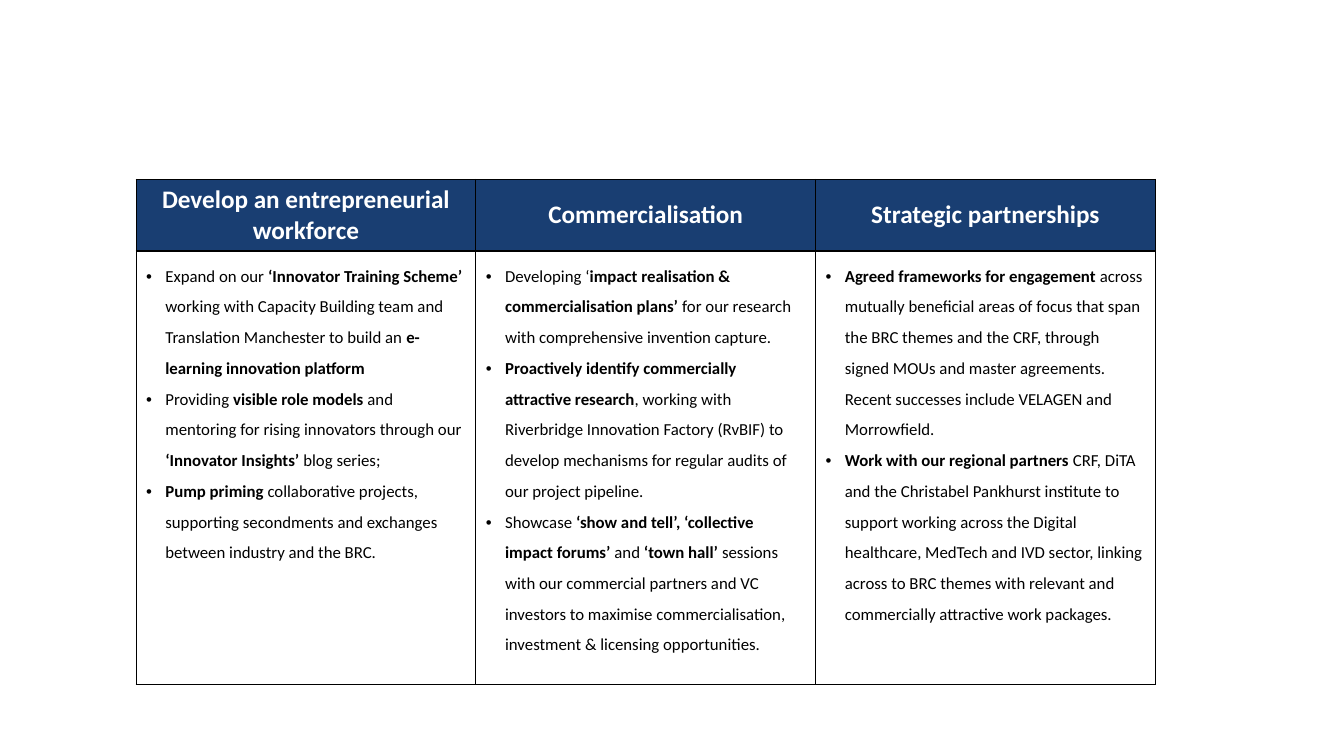
from typing import NamedTuple

from lxml import etree
from pptx import Presentation
from pptx.dml.color import RGBColor
from pptx.enum.text import MSO_ANCHOR, PP_ALIGN
from pptx.oxml.ns import qn
from pptx.util import Inches, Pt

CENTER = PP_ALIGN.CENTER
MIDDLE, TOP = MSO_ANCHOR.MIDDLE, MSO_ANCHOR.TOP

NAVY = RGBColor(0x19, 0x3E, 0x72)
WHITE = RGBColor(0xFF, 0xFF, 0xFF)
BLACK = RGBColor(0x00, 0x00, 0x00)
FONT = "Calibri"

# Grid, in inches
SLIDE_W, SLIDE_H = 13.33, 7.5
GRID_LEFT, GRID_TOP = 1.35, 1.78
COLUMN_W = 3.37
HEADER_H, BODY_H = 0.7, 4.3
BULLET_INDENT = 0.19


class Span(NamedTuple):
    text: str
    bold: bool = False


class Pillar(NamedTuple):
    heading: str
    bullets: list[list[Span]]


PILLARS = [
    Pillar("Develop an entrepreneurial workforce", [
        [Span("Expand on our "),
         Span("‘Innovator Training Scheme’ ", True),
         Span("working with Capacity Building team and Translation Manchester to build an "),
         Span("e-learning innovation platform", True)],
        [Span("Providing "),
         Span("visible role models ", True),
         Span("and mentoring for rising innovators through our "),
         Span("‘Innovator Insights’ ", True),
         Span("blog series;")],
        [Span("Pump priming ", True),
         Span("collaborative projects, supporting secondments and exchanges "
              "between industry and the BRC.")],
    ]),
    Pillar("Commercialisation", [
        [Span("Developing ‘"),
         Span("impact realisation & commercialisation plans’ ", True),
         Span("for our research with comprehensive invention capture.")],
        [Span("Proactively identify commercially attractive research", True),
         Span(", working with Riverbridge Innovation Factory (RvBIF) to develop "
              "mechanisms for regular audits of our project pipeline.")],
        [Span("Showcase "),
         Span("‘show and tell’, ‘collective impact forums’ ", True),
         Span("and "),
         Span("‘town hall’ ", True),
         Span("sessions with our commercial partners and VC investors to maximise "
              "commercialisation, investment & licensing opportunities.")],
    ]),
    Pillar("Strategic partnerships", [
        [Span("Agreed frameworks for engagement ", True),
         Span("across mutually beneficial areas of focus that span the BRC themes and "
              "the CRF, through signed MOUs and master agreements. Recent successes "
              "include VELAGEN and Morrowfield.")],
        [Span("Work with our regional partners ", True),
         Span("CRF, DiTA and the Christabel Pankhurst institute to support working "
              "across the Digital healthcare, MedTech and IVD sector, linking across to "
              "BRC themes with relevant and commercially attractive work packages.")],
    ]),
]


def style_font(font, size: float, color: RGBColor, bold: bool) -> None:
    font.name = FONT
    font.size = Pt(size)
    font.color.rgb = color
    font.bold = bold


def add_borders(cell) -> None:
    """Draw a 1 pt black line on all four sides; call before setting the fill."""
    properties = cell._tc.get_or_add_tcPr()
    for side in ("a:lnL", "a:lnR", "a:lnT", "a:lnB"):
        line = etree.SubElement(properties, qn(side), w=str(Pt(1)))
        fill = etree.SubElement(line, qn("a:solidFill"))
        etree.SubElement(fill, qn("a:srgbClr"), val=str(BLACK))


def add_bullet(paragraph) -> None:
    properties = paragraph._p.get_or_add_pPr()
    indent = Inches(BULLET_INDENT)
    properties.set("marL", str(indent))
    properties.set("indent", str(-indent))
    etree.SubElement(properties, qn("a:buFont"), typeface="Arial")
    etree.SubElement(properties, qn("a:buChar"), char="•")


def fill_header(cell, heading: str) -> None:
    add_borders(cell)
    cell.fill.solid()
    cell.fill.fore_color.rgb = NAVY
    cell.vertical_anchor = MIDDLE
    cell.text_frame.text = heading
    paragraph = cell.text_frame.paragraphs[0]
    paragraph.alignment = CENTER
    style_font(paragraph.runs[0].font, 18, WHITE, True)


def fill_body(cell, bullets: list[list[Span]]) -> None:
    add_borders(cell)
    cell.fill.background()
    cell.vertical_anchor = TOP
    frame = cell.text_frame
    for index, spans in enumerate(bullets):
        paragraph = frame.add_paragraph() if index else frame.paragraphs[0]
        add_bullet(paragraph)
        paragraph.line_spacing = 1.5
        for span in spans:
            run = paragraph.add_run()
            run.text = span.text
            style_font(run.font, 12, BLACK, span.bold)


def main() -> None:
    prs = Presentation()
    prs.slide_width, prs.slide_height = Inches(SLIDE_W), Inches(SLIDE_H)
    slide = prs.slides.add_slide(prs.slide_layouts[6])

    # Table: one column per pillar
    strategy = slide.shapes.add_table(
        2, len(PILLARS), Inches(GRID_LEFT), Inches(GRID_TOP),
        Inches(COLUMN_W * len(PILLARS)), Inches(HEADER_H + BODY_H)).table
    strategy.horz_banding = False
    strategy.rows[0].height = Inches(HEADER_H)
    strategy.rows[1].height = Inches(BODY_H)

    # Headings and bullet lists
    for column, pillar in enumerate(PILLARS):
        strategy.columns[column].width = Inches(COLUMN_W)
        fill_header(strategy.cell(0, column), pillar.heading)
        fill_body(strategy.cell(1, column), pillar.bullets)

    prs.save("out.pptx")


if __name__ == "__main__":
    main()
